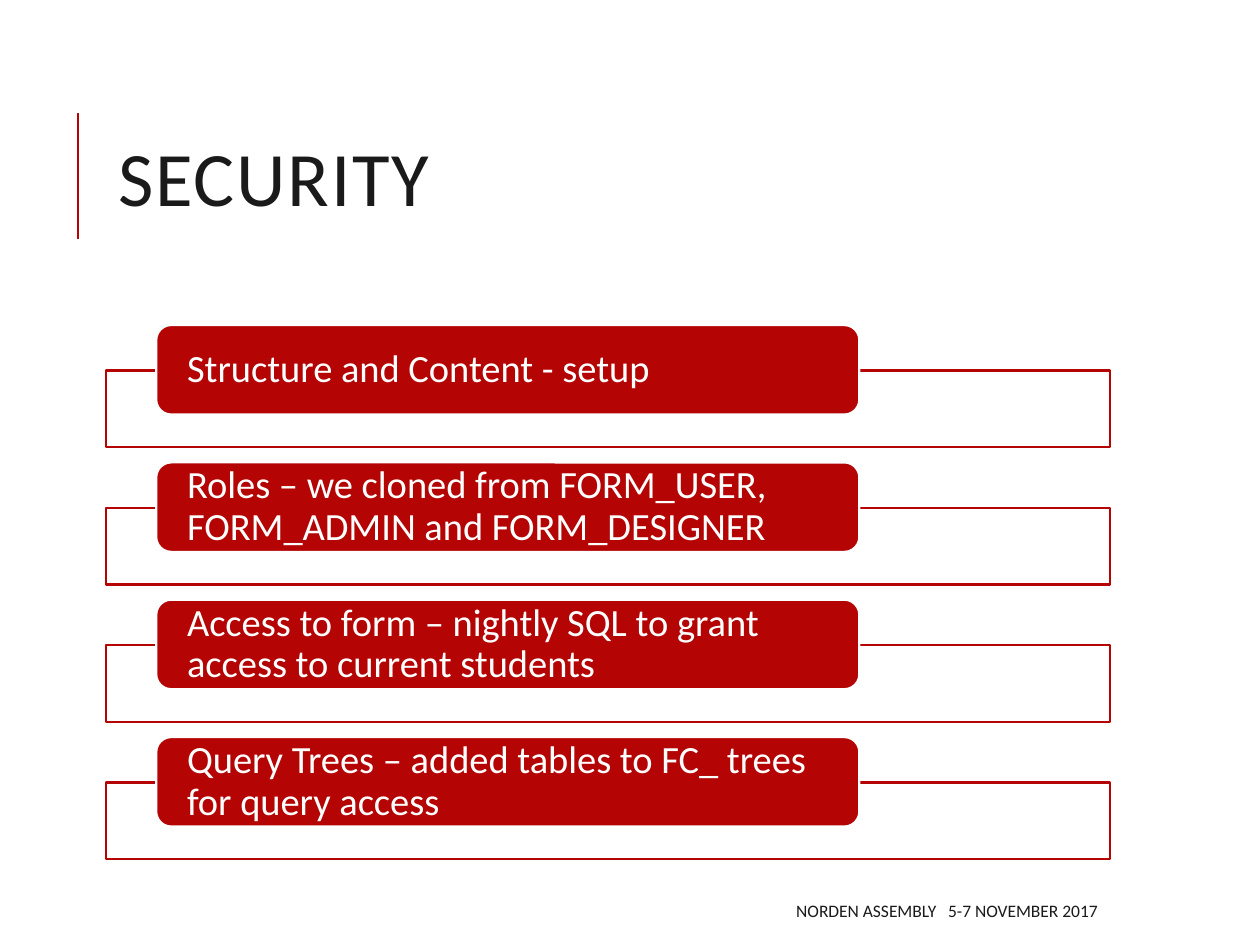
"""Build the Security slide: a title beside a rule and four labelled bars."""
from dataclasses import dataclass

from lxml.etree import SubElement
from pptx import Presentation
from pptx.dml.color import RGBColor
from pptx.enum.shapes import MSO_CONNECTOR as Connector, MSO_SHAPE as Shape
from pptx.enum.text import MSO_ANCHOR as Anchor, PP_ALIGN as Align
from pptx.oxml.ns import qn
from pptx.util import Inches, Pt


@dataclass(frozen=True)
class Theme:
    accent: RGBColor = RGBColor(0xB4, 0x04, 0x04)
    paper: RGBColor = RGBColor(0xFF, 0xFF, 0xFF)
    ink: RGBColor = RGBColor(0x1A, 0x1A, 0x1A)
    font: str = "Calibri"
    title_size: int = 44
    label_size: int = 22
    footer_size: int = 10
    outline: float = 1.25
    rule: float = 1.5


@dataclass(frozen=True)
class Area:
    left: float
    top: float
    width: float
    height: float

    def lengths(self) -> list:
        return [Inches(n) for n in (self.left, self.top, self.width, self.height)]


@dataclass(frozen=True)
class Span:
    text: str
    spacing: float = 0


THEME = Theme()
LEFT, WIDTH = 0.84, 7.97
FIRST_LABEL, PITCH, FRAME_DROP = 2.58, 1.09, 0.36
LABELS = (
    "Structure and Content - setup",
    "Roles – we cloned from FORM_USER, FORM_ADMIN and FORM_DESIGNER",
    "Access to form – nightly SQL to grant access to current students",
    "Query Trees – added tables to FC_ trees for query access",
)
FOOTER = (Span("NORDEN ASSEMBLY"), Span(" ", 4.5), Span("5-7 NOVEMBER 2017"))


def apply(target, formats: dict) -> None:
    for name, value in formats.items():
        setattr(target, name, value)


def write(box, spans: tuple, size: int, color: RGBColor, line_spacing: float = 1.0,
          align: Align = Align.LEFT, inset: float = 0.1, inset_top: float = 0.05) -> None:
    frame = box.text_frame
    apply(frame, {
        "word_wrap": True, "vertical_anchor": Anchor.MIDDLE,
        "margin_left": Inches(inset), "margin_right": Inches(inset),
        "margin_top": Inches(inset_top), "margin_bottom": Inches(inset_top),
    })
    para = frame.paragraphs[0]
    apply(para, {"alignment": align, "line_spacing": line_spacing})
    for span in spans:
        run = para.add_run()
        run.text = span.text
        apply(run.font, {"name": THEME.font, "size": Pt(size)})
        run.font.color.rgb = color
        if span.spacing:
            run.font._element.set("spc", str(round(span.spacing * 100)))


def add_box(slide, kind: Shape, area: Area, fill: RGBColor, line: RGBColor):
    box = slide.shapes.add_shape(kind, *area.lengths())
    box.shadow.inherit = False
    box.fill.solid()
    box.fill.fore_color.rgb = fill
    box.line.color.rgb = line
    box.line.width = Pt(THEME.outline)
    return box


def add_rule(slide, left: float, top: float, bottom: float) -> None:
    rule = slide.shapes.add_connector(
        Connector.STRAIGHT, Inches(left), Inches(bottom), Inches(left), Inches(top))
    rule.line.color.rgb = THEME.accent
    rule.line.width = Pt(THEME.rule)
    SubElement(rule._element.spPr, qn("a:effectLst"))


def add_item(slide, top: float, label: str) -> None:
    add_box(slide, Shape.RECTANGLE, Area(LEFT, top + FRAME_DROP, WIDTH, 0.61),
            THEME.paper, THEME.accent)
    tab = add_box(slide, Shape.ROUNDED_RECTANGLE, Area(1.24, top, 5.58, 0.71),
                  THEME.accent, THEME.paper)
    write(tab, (Span(label),), THEME.label_size, THEME.paper,
          line_spacing=0.9, inset=0.21, inset_top=0)


def main() -> None:
    deck = Presentation()
    apply(deck, {"slide_width": Inches(10), "slide_height": Inches(7.5)})
    slide = deck.slides.add_slide(deck.slide_layouts[6])

    add_rule(slide, 0.62, 0.9, 1.9)
    title = slide.shapes.add_textbox(*Area(LEFT, 0.64, WIDTH, 1.64).lengths())
    write(title, (Span("SECURITY", 1),), THEME.title_size, THEME.ink, line_spacing=0.8)

    for index, label in enumerate(LABELS):
        add_item(slide, FIRST_LABEL + index * PITCH, label)

    footer = slide.shapes.add_textbox(*Area(3.97, 7.08, 4.84, 0.3).lengths())
    write(footer, FOOTER, THEME.footer_size, THEME.ink, align=Align.RIGHT)
    deck.save("out.pptx")


if __name__ == "__main__":
    main()
